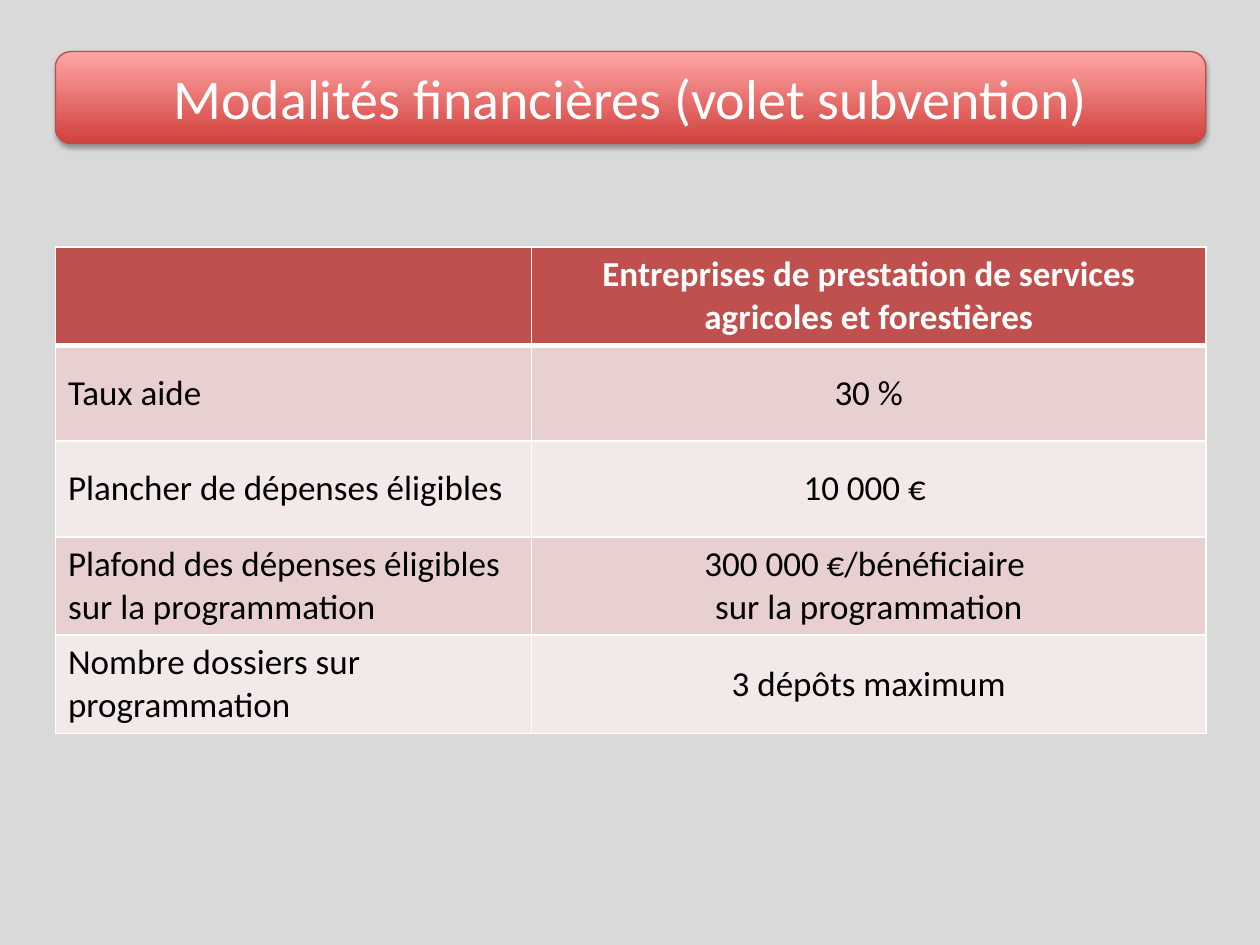
import pptx
import pptx.util
import pptx.dml.color
import pptx.enum.shapes
import pptx.enum.text
import pptx.oxml
import pptx.oxml.ns
from pptx.util import Inches

TITLE = "Modalités financières (volet subvention)"
ROWS = [
    ("", "Entreprises de prestation de services agricoles et forestières"),
    ("Taux aide", "30 %"),
    ("Plancher de dépenses éligibles", "10 000 € "),
    ("Plafond des dépenses éligibles sur la programmation",
     "300 000 €/bénéficiaire \nsur la programmation"),
    ("Nombre dossiers sur programmation", "3 dépôts maximum"),
]
COL_WIDTHS = (3.78, 5.35)
ROW_HEIGHT = 0.76
LEFT, WIDTH = 0.44, sum(COL_WIDTHS)
HEADER_FILL, BAND_FILLS = "C0504D", ("E8D0D0", "F4E9E9")
ALIGN = pptx.enum.text.PP_ALIGN
MIDDLE = pptx.enum.text.MSO_ANCHOR.MIDDLE
NS = pptx.oxml.ns.nsdecls("a")


def rgb(color):
    return pptx.dml.color.RGBColor.from_string(color)


def style(p, size, color, align, bold=False):
    p.alignment = align
    p.font.name = "Calibri"
    p.font.size = pptx.util.Pt(size)
    p.font.bold = bold
    p.font.color.rgb = rgb(color)


def add_borders(cell, bottom):
    tcPr = cell._tc.get_or_add_tcPr()
    widths = {"lnL": 1, "lnR": 1, "lnT": 1, "lnB": bottom}
    for i, (side, width) in enumerate(widths.items()):
        tcPr.insert(i, pptx.oxml.parse_xml(
            f'<a:{side} {NS} w="{pptx.util.Pt(width)}"><a:solidFill>'
            f'<a:srgbClr val="FFFFFF"/></a:solidFill></a:{side}>'))


def add_title(s):
    sp = s.shapes.add_shape(pptx.enum.shapes.MSO_SHAPE.ROUNDED_RECTANGLE,
                            Inches(LEFT), Inches(0.41), Inches(WIDTH), Inches(0.73))
    sp.fill.gradient()
    sp.fill.gradient_angle = 90
    for stop, color in zip(sp.fill.gradient_stops, ("D1403C", "FFA6A5")):
        stop.color.rgb = rgb(color)
    sp.line.color.rgb = rgb("BF4C48")
    sp.line.width = pptx.util.Pt(0.75)
    sp.shadow.inherit = False
    effects = sp._element.spPr.find(pptx.oxml.ns.qn("a:effectLst"))
    effects.append(pptx.oxml.parse_xml(
        f'<a:outerShdw {NS} blurRad="{pptx.util.Pt(3.1)}" dist="{pptx.util.Pt(1.8)}" '
        'dir="5400000" rotWithShape="0"><a:srgbClr val="000000">'
        '<a:alpha val="35000"/></a:srgbClr></a:outerShdw>'))
    tf = sp.text_frame
    tf.word_wrap = True
    tf.vertical_anchor = MIDDLE
    tf.text = TITLE
    style(tf.paragraphs[0], 32, "FFFFFF", ALIGN.CENTER)


def add_grid(s):
    table = s.shapes.add_table(len(ROWS), len(COL_WIDTHS), Inches(LEFT), Inches(1.96),
                               Inches(WIDTH), Inches(ROW_HEIGHT * len(ROWS))).table
    for column, width in zip(table.columns, COL_WIDTHS):
        column.width = Inches(width)
    for i, texts in enumerate(ROWS):
        table.rows[i].height = Inches(ROW_HEIGHT)
        header = i == 0
        for j, text in enumerate(texts):
            cell = table.cell(i, j)
            cell.text = text
            if not header:
                cell.vertical_anchor = MIDDLE
            cell.fill.solid()
            cell.fill.fore_color.rgb = rgb(HEADER_FILL if header else BAND_FILLS[(i - 1) % 2])
            add_borders(cell, 3 if header else 1)
            for p in cell.text_frame.paragraphs:
                style(p, 20, "FFFFFF" if header else "000000",
                      ALIGN.CENTER if j else ALIGN.LEFT, header)


def main():
    prs = pptx.Presentation()
    prs.slide_width, prs.slide_height = Inches(10), Inches(7.5)
    s = prs.slides.add_slide(prs.slide_layouts[6])
    s.background.fill.solid()
    s.background.fill.fore_color.rgb = rgb("D9D9D9")
    add_title(s)
    add_grid(s)
    prs.save("out.pptx")


if __name__ == "__main__":
    main()
